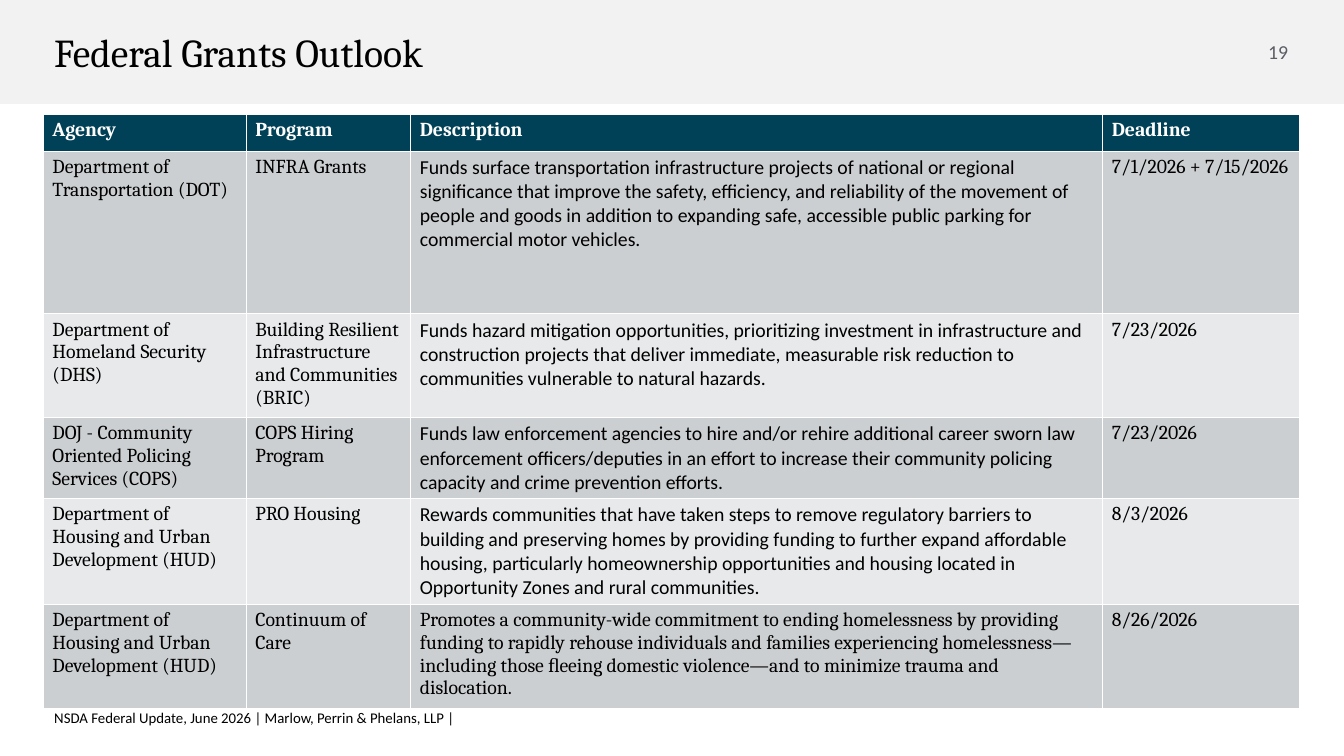
from pptx import Presentation
from pptx.dml.color import RGBColor
from pptx.enum.shapes import MSO_SHAPE
from pptx.enum.text import MSO_ANCHOR, PP_ALIGN
from pptx.util import Inches, Pt

RECTANGLE = MSO_SHAPE.RECTANGLE
MIDDLE = MSO_ANCHOR.MIDDLE
LEFT, CENTER = PP_ALIGN.LEFT, PP_ALIGN.CENTER

HEADER_FILL = "004157"
BAND_FILLS = ["CCCFD1", "E7E9EA"]
COL_WIDTHS = [2.28, 1.85, 7.78, 2.21]
ROW_HEIGHTS = [0.41, 1.83, 1.12, 0.91, 1.19, 1.11]
GRANTS = [
    ("Agency", "Program", "Description", "Deadline"),
    ("Department of Transportation (DOT)", "INFRA Grants",
     "Funds surface transportation infrastructure projects of national or regional "
     "signiﬁcance that improve the safety, efficiency, and reliability of the movement of "
     "people and goods in addition to expanding safe, accessible public parking for "
     "commercial motor vehicles.",
     "7/1/2026 + 7/15/2026"),
    ("Department of Homeland Security (DHS)",
     "Building Resilient Infrastructure and Communities (BRIC)",
     "Funds hazard mitigation opportunities, prioritizing investment in infrastructure and "
     "construction projects that deliver immediate, measurable risk reduction to "
     "communities vulnerable to natural hazards.",
     "7/23/2026"),
    ("DOJ - Community Oriented Policing Services (COPS)", "COPS Hiring Program",
     "Funds law enforcement agencies to hire and/or rehire additional career sworn law "
     "enforcement officers/deputies in an effort to increase their community policing "
     "capacity and crime prevention efforts.",
     "7/23/2026"),
    ("Department of Housing and Urban Development (HUD)", "PRO Housing",
     "Rewards communities that have taken steps to remove regulatory barriers to "
     "building and preserving homes by providing funding to further expand affordable "
     "housing, particularly homeownership opportunities and housing located in "
     "Opportunity Zones and rural communities.",
     "8/3/2026"),
    ("Department of Housing and Urban Development (HUD)", "Continuum of Care",
     "Promotes a community-wide commitment to ending homelessness by providing "
     "funding to rapidly rehouse individuals and families experiencing homelessness—"
     "including those ﬂeeing domestic violence—and to minimize trauma and dislocation.",
     "8/26/2026"),
]


def rgb(color):
    return RGBColor.from_string(color)


def write(tf, text, size, font, color, bold=False, align=LEFT):
    """Fill the first paragraph of a text frame with one formatted run."""
    p = tf.paragraphs[0]
    p.alignment = align
    r = p.add_run()
    r.text = text
    for name, value in {"size": Pt(size), "name": font, "bold": bold}.items():
        setattr(r.font, name, value)
    r.font.color.rgb = rgb(color)


prs = Presentation()
prs.slide_width, prs.slide_height = Inches(15.11), Inches(8.5)
s = prs.slides.add_slide(prs.slide_layouts[5])

# Title band, sent behind the title placeholder
band = s.shapes.add_shape(RECTANGLE, 0, 0, prs.slide_width, Inches(1.17))
band.shadow.inherit = False
band.fill.solid()
band.fill.fore_color.rgb = rgb("F2F2F2")
band.line.fill.background()
s.shapes.title.element.addprevious(band.element)

# Title, slide number and footer
title = s.shapes.title
title.left, title.top, title.width, title.height = map(Inches, (0.5, 0.26, 13.52, 0.65))
number = s.shapes.add_textbox(Inches(14.12), Inches(0.26), Inches(0.5), Inches(0.65))
footer = s.shapes.add_textbox(Inches(0.5), Inches(7.96), Inches(12.64), Inches(0.25))
for sp, side, edge in [(title, 0.11, 0.06), (number, 0, 0), (footer, 0.11, 0)]:
    tf = sp.text_frame
    tf.word_wrap = sp is not number
    tf.vertical_anchor = MIDDLE
    tf.margin_left = tf.margin_right = Inches(side)
    tf.margin_top = tf.margin_bottom = Inches(edge)
write(title.text_frame, "Federal Grants Outlook", 32, "Cambria", "000000")
write(number.text_frame, "19", 16, "Calibri", "5C5E66", align=CENTER)
write(footer.text_frame, "NSDA Federal Update, June 2026 | Marlow, Perrin & Phelans, LLP |",
      12, "Calibri", "000000")
footer.text_frame.paragraphs[0].line_spacing = 0.8

# Grants table
table = s.shapes.add_table(len(GRANTS), len(COL_WIDTHS), Inches(0.49), Inches(1.29),
                           Inches(sum(COL_WIDTHS)), Inches(sum(ROW_HEIGHTS))).table
for col, width in zip(table.columns, COL_WIDTHS):
    col.width = Inches(width)
for i, (row, height, texts) in enumerate(zip(table.rows, ROW_HEIGHTS, GRANTS)):
    row.height = Inches(height)
    header, last = i == 0, i == len(GRANTS) - 1
    for j, (cell, text) in enumerate(zip(row.cells, texts)):
        cell.fill.solid()
        cell.fill.fore_color.rgb = rgb(HEADER_FILL if header else BAND_FILLS[(i - 1) % 2])
        font = "Calibri" if j == 2 and not header and not last else "Cambria"
        write(cell.text_frame, text, 16, font, "FFFFFF" if header else "000000", bold=header)

prs.save("out.pptx")
